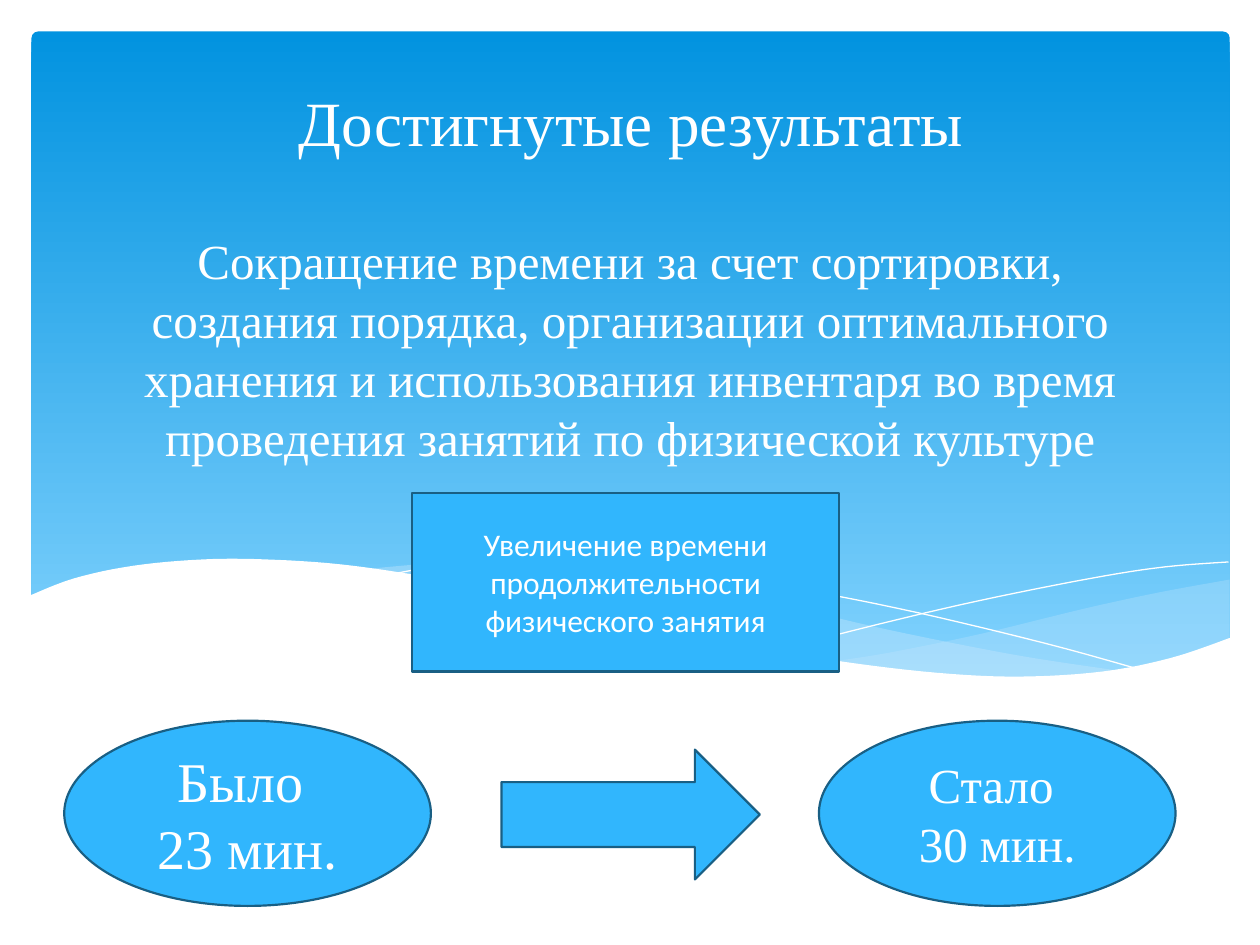
"""Build the slide on the results of sorting sports equipment."""
from dataclasses import dataclass

from lxml.etree import SubElement
from pptx import Presentation
from pptx.dml.color import RGBColor
from pptx.enum.shapes import MSO_SHAPE
from pptx.enum.text import MSO_ANCHOR, PP_ALIGN
from pptx.oxml.ns import qn
from pptx.util import Inches, Pt


@dataclass(frozen=True)
class Theme:
    white: RGBColor = RGBColor(0xFF, 0xFF, 0xFF)
    sky: RGBColor = RGBColor(0x02, 0x93, 0xE0)
    haze: RGBColor = RGBColor(0x83, 0xD3, 0xFE)
    mist: RGBColor = RGBColor(0xC6, 0xE7, 0xFC)
    blue: RGBColor = RGBColor(0x31, 0xB6, 0xFD)
    edge: RGBColor = RGBColor(0x19, 0x5F, 0x84)
    serif: str = "Times New Roman"
    sans: str = "Calibri"
    head: int = 36
    big: int = 32
    body: int = 28
    small: int = 18


theme = Theme()


def curve(knots, steps=6):
    """Return a smooth line through the knots."""
    ends = [knots[0], *knots, knots[-1]]
    dots = [knots[0]]
    for a, b, c, d in zip(ends, ends[1:], ends[2:], ends[3:]):
        for step in range(1, steps + 1):
            t = step / steps
            dots.append(tuple(
                q + t / 2 * (r - p + t * (2 * p - 5 * q + 4 * r - s + t * (3 * (q - r) + s - p)))
                for p, q, r, s in zip(a, b, c, d)
            ))
    return dots


def write(frame, text, font, size):
    """Fill a text frame with centred white text."""
    frame.word_wrap = True
    frame.text = text
    for para in frame.paragraphs:
        para.alignment = PP_ALIGN.CENTER
        para.font.name = font
        para.font.size = Pt(size)
        para.font.color.rgb = theme.white


deck = Presentation()
deck.slide_width, deck.slide_height = Inches(10), Inches(7.5)
slide = deck.slides.add_slide(deck.slide_layouts[6])
shapes = slide.shapes

panel = shapes.add_shape(
    MSO_SHAPE.ROUNDED_RECTANGLE, Inches(0.25), Inches(0.25), Inches(9.51), Inches(5.18))
panel.shadow.inherit = False
panel.adjustments[0] = 0.01
panel.fill.gradient()
panel.fill.gradient_angle = 270
for stop, color, place in zip(panel.fill.gradient_stops, (theme.sky, theme.haze), (0, 1)):
    stop.color.rgb = color
    stop.position = place
panel.line.fill.background()

right = curve([(9.76, 4.6), (9.21, 4.7), (8.61, 4.83), (7.79, 5.03), (7.06, 5.18), (6.61, 5.25)])
right += curve([(6.61, 5.25), (7.19, 5.33), (7.81, 5.37), (8.35, 5.37), (8.89, 5.32),
                (9.35, 5.22), (9.76, 5.07)])
band = curve([(8.93, 5.33), (8.07, 5.2), (7.06, 5), (6.29, 4.82), (5.55, 4.65), (4.89, 4.54),
              (4.2, 4.47), (3.61, 4.46), (2.86, 4.52)])
band += curve([(2.86, 4.52), (3.62, 4.63), (4.49, 4.82), (5.3, 5.01), (6.01, 5.15), (6.8, 5.28),
               (7.48, 5.36), (8.18, 5.39), (8.93, 5.33)])
fall = curve([(3.09, 4.56), (3.53, 4.49), (4.16, 4.47), (4.89, 4.5), (5.56, 4.57), (6.36, 4.68),
              (7.27, 4.86), (8.31, 5.11), (9.07, 5.32)])
rise = curve([(6.13, 5.17), (6.95, 4.96), (7.76, 4.77), (8.66, 4.59), (9.24, 4.5), (9.75, 4.46)])
front = curve([(9.77, 5.06), (9.3, 5.22), (8.75, 5.33), (8.09, 5.37), (7.44, 5.34), (6.68, 5.25),
               (5.79, 5.1), (5.03, 4.93), (4.18, 4.73), (3.4, 4.58), (2.71, 4.48), (2.11, 4.44),
               (1.61, 4.44), (1.06, 4.49), (0.59, 4.59), (0.23, 4.73)])
front += [(0.23, 5.89), (9.77, 5.89)]

for dots, color, alpha in (
    (right, theme.mist, 29),
    (band, theme.mist, 40),
    (fall, None, 100),
    (rise, None, 100),
    (front, theme.white, 100),
):
    dots = [(Inches(x), Inches(y)) for x, y in dots]
    pen = shapes.build_freeform(*dots[0])
    pen.add_line_segments(dots[1:], close=color is not None)
    wave = pen.convert_to_shape()
    wave.shadow.inherit = False
    if color is None:
        wave.fill.background()
        wave.line.color.rgb = theme.white
        wave.line.width = Pt(0)
        continue
    wave.fill.solid()
    wave.fill.fore_color.rgb = color
    wave.line.fill.background()
    if alpha < 100:
        tint = wave.element.spPr.find(qn("a:solidFill"))[0]
        SubElement(tint, qn("a:alpha")).set("val", str(alpha * 1000))

for text, size, anchor, spot in (
    ("Сокращение времени за счет сортировки, создания порядка, организации оптимального "
     "хранения и использования инвентаря во время проведения занятий по физической культуре",
     theme.body, MSO_ANCHOR.MIDDLE, (0.75, 1.78, 8.5, 1.97)),
    ("Достигнутые результаты", theme.head, MSO_ANCHOR.BOTTOM, (1.5, 0.44, 7.02, 0.87)),
):
    frame = shapes.add_textbox(*map(Inches, spot)).text_frame
    frame.vertical_anchor = anchor
    write(frame, text, theme.serif, size)

for kind, spot, text, font, size in (
    (MSO_SHAPE.RECTANGLE, (3.27, 3.91, 3.39, 1.42),
     "Увеличение времени продолжительности физического занятия", theme.sans, theme.small),
    (MSO_SHAPE.OVAL, (0.51, 5.72, 2.91, 1.47), "Было \n23 мин.", theme.serif, theme.big),
    (MSO_SHAPE.OVAL, (6.5, 5.72, 2.83, 1.47), "Стало \n30 мин.", theme.serif, theme.body),
    (MSO_SHAPE.RIGHT_ARROW, (3.98, 5.95, 2.05, 1.03), "", theme.sans, theme.small),
):
    block = shapes.add_shape(kind, *map(Inches, spot))
    block.shadow.inherit = False
    block.fill.solid()
    block.fill.fore_color.rgb = theme.blue
    block.line.color.rgb = theme.edge
    block.line.width = Pt(1.25)
    if text:
        write(block.text_frame, text, font, size)

deck.save("out.pptx")
